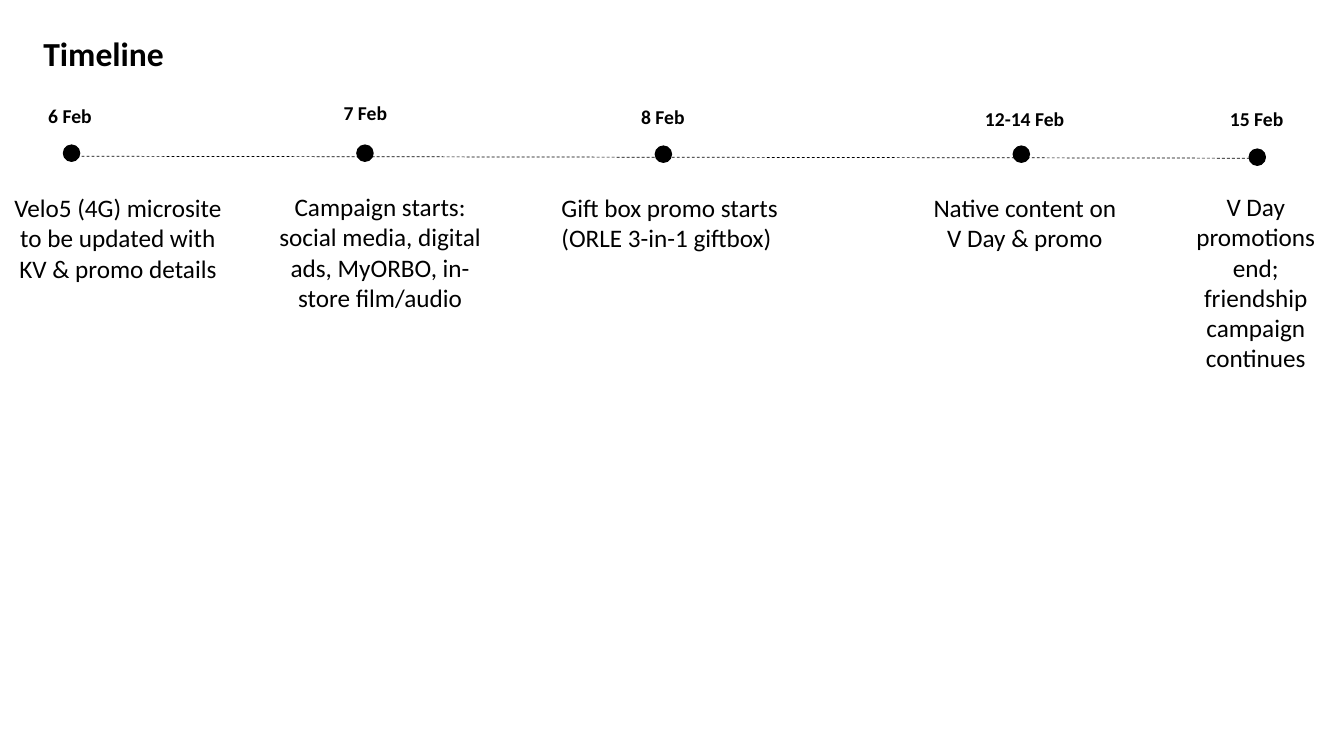
from pptx import Presentation
from pptx.dml.color import RGBColor
from pptx.enum.dml import MSO_LINE
from pptx.enum.shapes import MSO_CONNECTOR, MSO_SHAPE
from pptx.enum.text import MSO_ANCHOR, MSO_AUTO_SIZE, PP_ALIGN
from pptx.util import Inches, Pt
from lxml.etree import SubElement
from pptx.oxml.ns import qn

BLACK = "000000"
FONT = "Calibri"
DOT = 0.16
TITLE = ("Timeline", (0.33, 0.28, 1.41, 0.5))
LINE = (0.71, 1.55, 12.55, 1.57)
LEFT, CENTER = PP_ALIGN.LEFT, PP_ALIGN.CENTER

MILESTONES = [
    dict(date="6 Feb", date_box=(0.38, 0.98, 0.63, 0.34), dot=(0.63, 1.44),
         lines=["Velo5 (4G) microsite to be updated with KV & promo details"],
         box=(0.04, 1.86, 2.26, 1.31), align=CENTER),
    dict(date="7 Feb", date_box=(3.31, 0.95, 0.64, 0.34), dot=(3.54, 1.44),
         lines=["Campaign starts: social media, digital ads, MyORBO, in-store film/audio"],
         box=(2.56, 1.85, 2.42, 1.31), align=CENTER),
    dict(date="8 Feb", date_box=(6.26, 0.99, 0.64, 0.34), dot=(6.5, 1.45),
         lines=["Gift box promo starts", "(ORLE 3-in-1 giftbox)"],
         box=(5.47, 1.86, 2.55, 0.71), align=LEFT),
    dict(date="12-14 Feb", date_box=(9.67, 1.01, 0.99, 0.34), dot=(10.05, 1.45),
         lines=["Native content on V Day & promo"],
         box=(9.08, 1.86, 2.17, 0.71), align=CENTER),
    dict(date="15 Feb", date_box=(12.1, 1.01, 0.74, 0.34), dot=(12.39, 1.48),
         lines=["V Day promotions end; friendship campaign continues"],
         box=(11.69, 1.85, 1.53, 1.92), align=CENTER),
]


def color(value):
    return RGBColor.from_string(value)


def write(sp, lines, size, bold=False, align=LEFT, wrap=False):
    tf = sp.text_frame
    tf.word_wrap = wrap
    tf.auto_size = MSO_AUTO_SIZE.SHAPE_TO_FIT_TEXT
    tf.vertical_anchor = MSO_ANCHOR.TOP
    for i, line in enumerate(lines):
        p = tf.add_paragraph() if i else tf.paragraphs[0]
        p.alignment = align
        p.line_spacing = 1.0
        p.space_before = Pt(0)
        r = p.add_run()
        r.text = line
        r.font.name = FONT
        r.font.size = Pt(size)
        r.font.bold = bold
        r.font.color.rgb = color(BLACK)


def add_text(s, box, lines, size, **style):
    sp = s.shapes.add_textbox(*map(Inches, box))
    write(sp, lines, size, **style)


def add_dot(s, x, y):
    sp = s.shapes.add_shape(MSO_SHAPE.OVAL, *map(Inches, (x, y, DOT, DOT)))
    sp.shadow.inherit = False
    sp.fill.solid()
    sp.fill.fore_color.rgb = color(BLACK)
    sp.line.color.rgb = color(BLACK)
    sp.line.width = Pt(1)


def add_dashed_line(s, ends):
    cn = s.shapes.add_connector(MSO_CONNECTOR.STRAIGHT, *map(Inches, ends))
    cn.line.color.rgb = color(BLACK)
    cn.line.width = Pt(0.5)
    cn.line.dash_style = MSO_LINE.DASH
    SubElement(cn._element.spPr, qn("a:effectLst"))


def main():
    prs = Presentation()
    prs.slide_width, prs.slide_height = Inches(13.33), Inches(7.5)
    s = prs.slides.add_slide(prs.slide_layouts[5])

    text, box = TITLE
    title = s.shapes.title
    title.left, title.top, title.width, title.height = map(Inches, box)
    write(title, [text], 24, bold=True)

    add_dashed_line(s, LINE)
    for m in MILESTONES:
        add_dot(s, *m["dot"])
        add_text(s, m["date_box"], [m["date"]], 14, bold=True)
        add_text(s, m["box"], m["lines"], 18, align=m["align"], wrap=True)

    prs.save("out.pptx")


if __name__ == "__main__":
    main()
